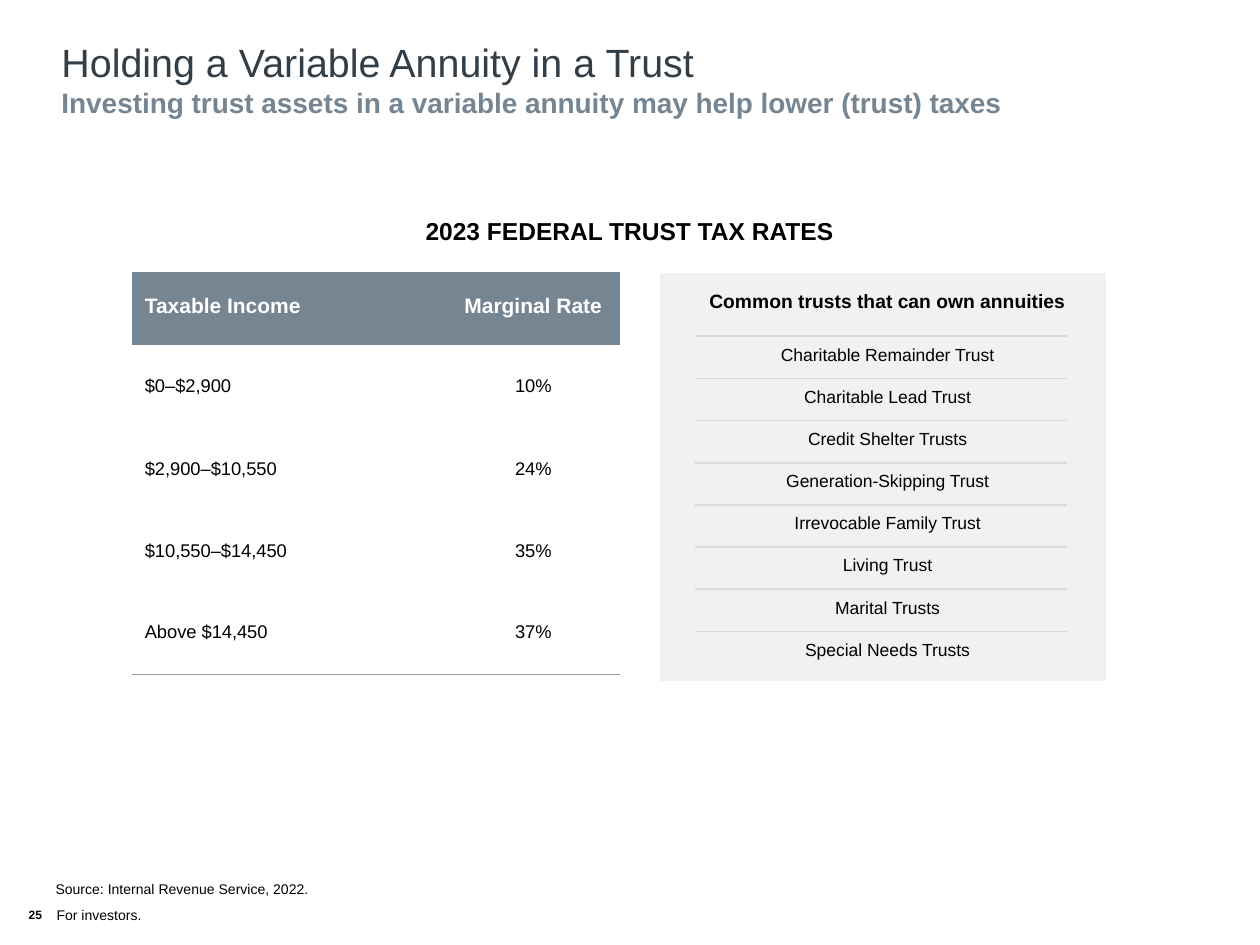
import pptx
import pptx.util
import pptx.dml.color
import pptx.enum.shapes
import pptx.enum.text
import pptx.oxml
import pptx.oxml.ns
import lxml.etree

Cm = pptx.util.Cm
Pt = pptx.util.Pt
RGB = pptx.dml.color.RGBColor
Align = pptx.enum.text.PP_ALIGN
Anchor = pptx.enum.text.MSO_ANCHOR
qn = pptx.oxml.ns.qn

hues = {"ink": "000000", "title": "333E47", "slate": "768592",
        "white": "FFFFFF", "panel": "F1F1F1", "rule": "D9D9D9",
        "dots": "999999"}


def write(para, text, size, hue="ink", bold=False):
    run = para.add_run()
    run.text = text
    font = run.font
    font.name, font.size, font.bold = "Arial", Pt(size), bold
    font.color.rgb = RGB.from_string(hues[hue])
    return run


def edge(cell, dash=None):
    """Clear all cell borders, then draw the bottom one if a dash is given."""
    props = cell._tc.get_or_add_tcPr()
    for spot, side in enumerate(("lnL", "lnR", "lnT", "lnB")):
        line = lxml.etree.Element(qn("a:" + side), w="9525")
        if side == "lnB" and dash:
            fill = lxml.etree.SubElement(line, qn("a:solidFill"))
            lxml.etree.SubElement(fill, qn("a:srgbClr"), val=hues["dots"])
            lxml.etree.SubElement(line, qn("a:prstDash"), val=dash)
        else:
            lxml.etree.SubElement(line, qn("a:noFill"))
        props.insert(spot, line)


deck = pptx.Presentation()
deck.slide_width, deck.slide_height = Cm(25.4), Cm(19.05)
slide = deck.slides.add_slide(deck.slide_layouts[6])
shapes = slide.shapes

# Text boxes: left, top, width, height, top inset
boxes = []
for left, top, wide, high, inset in [
        (1.24, 0.71, 22.56, 1.78, 0.06),
        (8.58, 4.29, 8.3, 0.66, 0.06),
        (1.12, 17.7, 5.18, 0.41, 0.06),
        (0.58, 17.7, 12.65, 0.81, 0.43)]:
    frame = shapes.add_textbox(Cm(left), Cm(top), Cm(wide), Cm(high)).text_frame
    frame.word_wrap = True
    frame.margin_left = frame.margin_right = frame.margin_bottom = 0
    frame.margin_top = Cm(inset)
    boxes.append(frame)
title, head, source, foot = boxes

write(title.paragraphs[0], "Holding a Variable Annuity in a Trust", 22.5, "title")
write(title.add_paragraph(),
      "Investing trust assets in a variable annuity may help lower (trust) taxes",
      16, "slate", True)
write(head.paragraphs[0], "2023 FEDERAL TRUST TAX RATES", 14, bold=True)
write(source.paragraphs[0], "Source: Internal Revenue Service, 2022.", 8)

# Page number and footer share a line, split by a tab stop
para = foot.paragraphs[0]
tabs = lxml.etree.SubElement(para._p.get_or_add_pPr(), qn("a:tabLst"))
lxml.etree.SubElement(tabs, qn("a:tab"), pos=str(Cm(0.56)), algn="l")
num = write(para, "25", 12, bold=True)
num.font._element.set("baseline", "3000")
write(para, "\tFor investors.", 8)

# Tax rates
rates = [("Taxable Income", "Marginal Rate"), ("$0–$2,900", "10%"),
         ("$2,900–$10,550", "24%"), ("$10,550–$14,450", "35%"),
         ("Above $14,450", "37%")]
highs = [1.47, 1.73, 1.65, 1.63, 1.63]
grid = shapes.add_table(5, 2, Cm(2.67), Cm(5.49), Cm(9.83), Cm(sum(highs))).table
grid.first_row = grid.horz_banding = False
grid.columns[0].width, grid.columns[1].width = Cm(5.05), Cm(4.78)
for row, (pair, high) in enumerate(zip(rates, highs)):
    grid.rows[row].height = Cm(high)
    for col, text in enumerate(pair):
        cell = grid.cell(row, col)
        cell.vertical_anchor = Anchor.MIDDLE
        cell.margin_left = Cm((0.25, 1.28)[col])
        cell.margin_right = cell.margin_top = 0
        cell.margin_bottom = Cm(0.1)
        para = cell.text_frame.paragraphs[0]
        para.alignment = (Align.LEFT, Align.CENTER)[col]
        if row == 0:
            cell.fill.solid()
            cell.fill.fore_color.rgb = RGB.from_string(hues["slate"])
            write(para, text, 12, "white", True)
            edge(cell)
        else:
            cell.fill.background()
            write(para, text, 10.5)
            edge(cell, "solid" if row == 4 else "sysDot")

# Trusts
trusts = ["Common trusts that can own annuities", "Charitable Remainder Trust",
          "Charitable Lead Trust", "Credit Shelter Trusts",
          "Generation-Skipping Trust", "Irrevocable Family Trust",
          "Living Trust", "Marital Trusts", "Special Needs Trusts"]
highs = [1.27] + [0.85] * 7 + [1]
top = 5.51
grid = shapes.add_table(9, 1, Cm(13.31), Cm(top), Cm(8.99), Cm(sum(highs))).table
grid.first_row = grid.horz_banding = False
for row, (text, high) in enumerate(zip(trusts, highs)):
    grid.rows[row].height = Cm(high)
    cell = grid.cell(row, 0)
    cell.fill.solid()
    cell.fill.fore_color.rgb = RGB.from_string(hues["panel"])
    cell.margin_left = Cm(0.17)
    cell.margin_right = cell.margin_bottom = 0
    cell.margin_top = Cm(0.18 if row else 0.36)
    para = cell.text_frame.paragraphs[0]
    para.alignment = Align.CENTER
    write(para, text, 10 if row else 11, bold=row == 0)
    edge(cell)

# Rules above each trust
for row in range(8):
    y = Cm(top + highs[0] + row * highs[1])
    rule = shapes.add_connector(pptx.enum.shapes.MSO_CONNECTOR.STRAIGHT,
                                Cm(14.02), y, Cm(21.5), y)
    rule.line.color.rgb = RGB.from_string(hues["rule"])
    rule.line.width = Pt(1)
    lxml.etree.SubElement(rule._element.spPr, qn("a:effectLst"))

deck.save("out.pptx")
